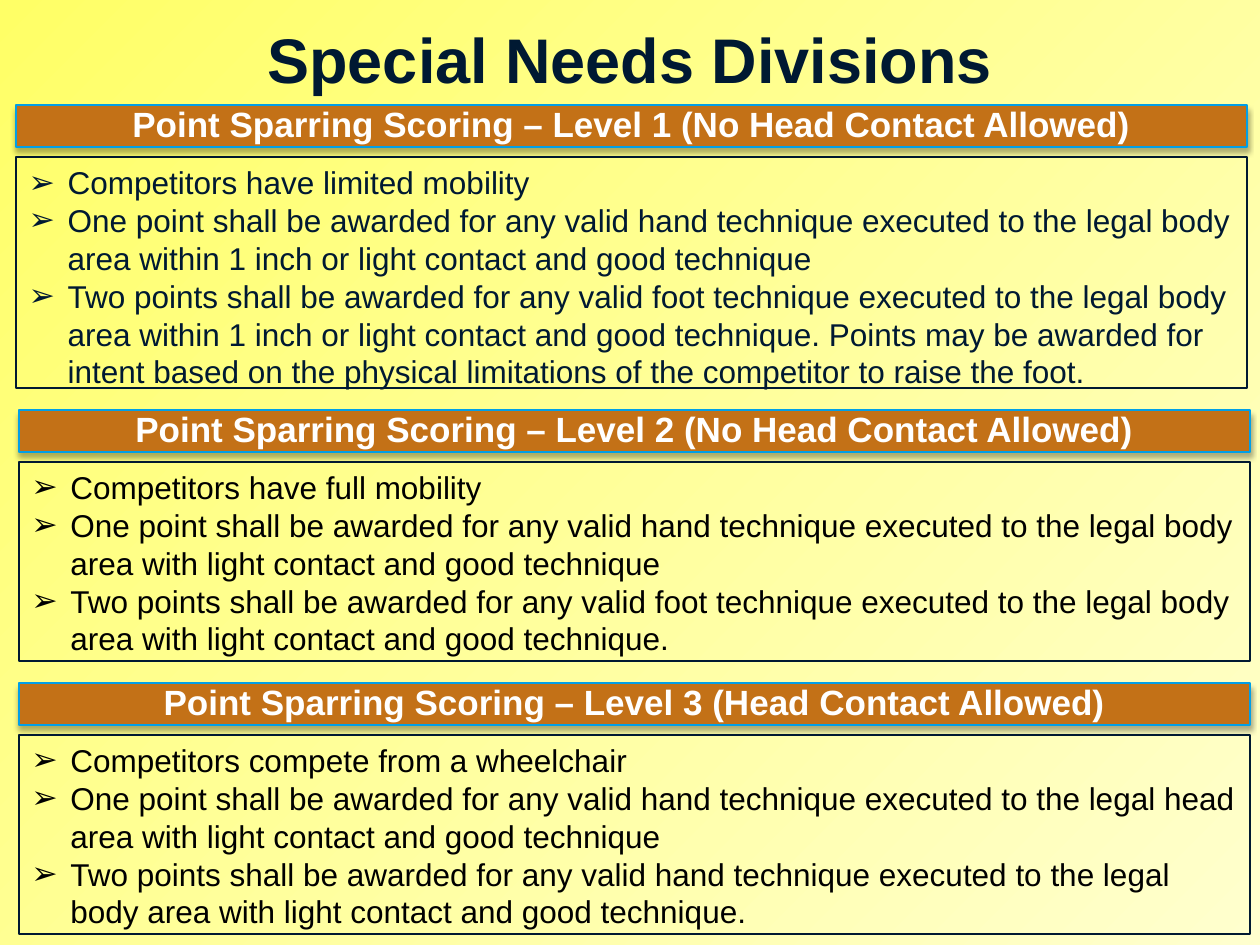
from lxml.etree import SubElement
from pptx import Presentation
from pptx.dml.color import RGBColor as RGB
from pptx.enum.shapes import MSO_SHAPE as SHAPE
from pptx.enum.text import MSO_ANCHOR as ANCHOR, MSO_AUTO_SIZE as AUTO, PP_ALIGN as ALIGN
from pptx.oxml.ns import qn
from pptx.util import Pt

COLORS = {"navy": "001932", "black": "000000", "white": "FFFFFF", "orange": "C37117",
          "blue": "019FE7", "bg_start": "FFFF66", "bg_end": "FFFFCE"}
TITLE = "Special Needs Divisions"
LEVELS = [
    {"left": 16, "top": 105, "height": 231, "color": "navy",
     "heading": "Point Sparring Scoring – Level 1 (No Head Contact Allowed)",
     "rules": [
         "Competitors have limited mobility",
         "One point shall be awarded for any valid hand technique executed to the legal body "
         "area within 1 inch or light contact and good technique",
         "Two points shall be awarded for any valid foot technique executed to the legal body "
         "area within 1 inch or light contact and good technique. Points may be awarded for "
         "intent based on the physical limitations of the competitor to raise the foot."]},
    {"left": 19, "top": 410, "height": 199, "color": "black",
     "heading": "Point Sparring Scoring – Level 2 (No Head Contact Allowed)",
     "rules": [
         "Competitors have full mobility",
         "One point shall be awarded for any valid hand technique executed to the legal body "
         "area with light contact and good technique",
         "Two points shall be awarded for any valid foot technique executed to the legal body "
         "area with light contact and good technique."]},
    {"left": 19, "top": 683, "height": 199, "color": "black",
     "heading": "Point Sparring Scoring – Level 3 (Head Contact Allowed)",
     "rules": [
         "Competitors compete from a wheelchair",
         "One point shall be awarded for any valid hand technique executed to the legal head "
         "area with light contact and good technique",
         "Two points shall be awarded for any valid hand technique executed to the legal "
         "body area with light contact and good technique."]},
]
WIDTH, BAR_H, BODY_OFFSET, INDENT = 1231, 42, 52, 39


def px(n):
    return round(n * 914400 / 126)


def rgb(name):
    return RGB.from_string(COLORS[name])


def assign(obj, values):
    for key, value in values.items():
        setattr(obj, key, value)


def place(sp, left, top, width, height):
    assign(sp, {"left": px(left), "top": px(top), "width": px(width), "height": px(height)})


def write(sp, lines, size, color, bold, align, anchor, spacing=1.0, bullet=None):
    tf = sp.text_frame
    assign(tf, {"word_wrap": True, "auto_size": AUTO.NONE, "vertical_anchor": anchor})
    for i, line in enumerate(lines):
        p = tf.paragraphs[0] if i == 0 else tf.add_paragraph()
        assign(p, {"alignment": align, "line_spacing": spacing,
                   "space_before": Pt(0), "space_after": Pt(0)})
        if bullet:
            pPr = p._p.get_or_add_pPr()
            pPr.set("marL", str(px(INDENT)))
            pPr.set("indent", str(-px(INDENT)))
            SubElement(pPr, qn("a:buFont"), typeface="Arial")
            SubElement(pPr, qn("a:buChar"), char=bullet)
        r = p.add_run()
        r.text = line
        assign(r.font, {"name": "Arial", "size": Pt(size), "bold": bold})
        r.font.color.rgb = rgb(color)


def outline(sp, color):
    sp.line.color.rgb = rgb(color)
    sp.line.width = Pt(0.75)


def add_rect(shapes):
    sp = shapes.add_shape(SHAPE.RECTANGLE, 0, 0, 0, 0)
    sp.shadow.inherit = False
    return sp


def add_shadow(sp):
    effects = sp._element.spPr.find(qn("a:effectLst"))
    shadow = SubElement(effects, qn("a:outerShdw"), blurRad=str(Pt(3.5)), dist=str(Pt(2.2)),
                        dir="5400000", rotWithShape="0")
    color = SubElement(shadow, qn("a:srgbClr"), val=COLORS["black"])
    SubElement(color, qn("a:alpha"), val="32000")


def main():
    prs = Presentation()
    assign(prs, {"slide_width": px(1260), "slide_height": px(945)})
    slide = prs.slides.add_slide(prs.slide_layouts[1])

    fill = slide.background.fill
    fill.gradient()
    fill.gradient_angle = 315
    for stop, name, position in zip(fill.gradient_stops, ("bg_start", "bg_end"), (0, 1)):
        stop.color.rgb = rgb(name)
        stop.position = position

    title = slide.shapes.title
    place(title, 63, 14, 1134, 73)
    write(title, [TITLE], 36, "navy", True, ALIGN.CENTER, ANCHOR.TOP)

    for i, level in enumerate(LEVELS):
        bar = add_rect(slide.shapes)
        place(bar, level["left"], level["top"], WIDTH, BAR_H)
        bar.fill.solid()
        bar.fill.fore_color.rgb = rgb("orange")
        outline(bar, "blue")
        add_shadow(bar)
        write(bar, [level["heading"]], 20, "white", True, ALIGN.CENTER, ANCHOR.MIDDLE, 0.9)

        body = slide.placeholders[1] if i == 0 else add_rect(slide.shapes)
        place(body, level["left"], level["top"] + BODY_OFFSET, WIDTH, level["height"])
        body.fill.background()
        outline(body, "navy")
        write(body, level["rules"], 18, level["color"], False, ALIGN.LEFT, ANCHOR.TOP,
              bullet="➢")

    prs.save("out.pptx")


if __name__ == "__main__":
    main()
